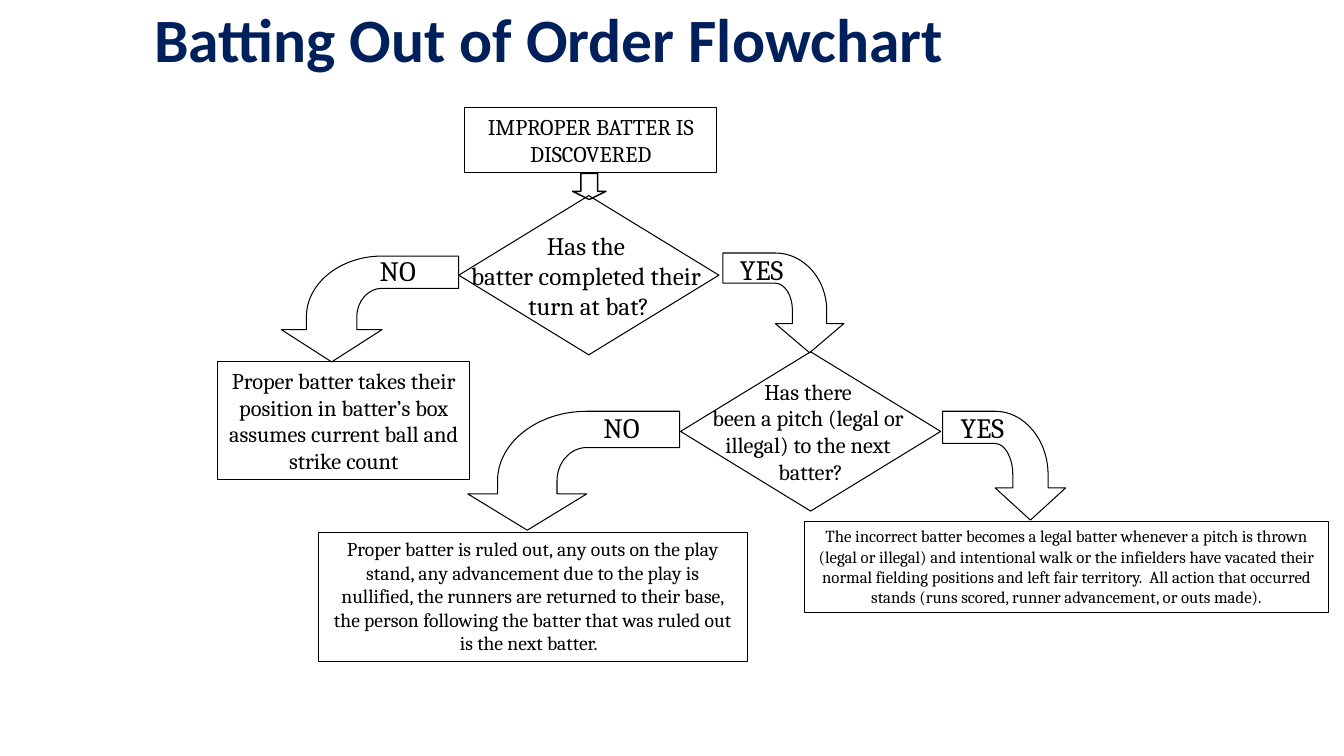
from dataclasses import dataclass
from pptx import Presentation
from pptx.dml.color import RGBColor
from pptx.enum.shapes import MSO_SHAPE
from pptx.enum.text import MSO_ANCHOR, MSO_AUTO_SIZE, PP_ALIGN
from pptx.oxml.ns import qn
from pptx.oxml.xmlchemy import OxmlElement
from pptx.util import Inches, Pt


@dataclass(frozen=True)
class Theme:
    navy: RGBColor = RGBColor(0x00, 0x20, 0x5B)
    black: RGBColor = RGBColor(0, 0, 0)
    white: RGBColor = RGBColor(255, 255, 255)
    head: str = "Calibri"
    body: str = "Cambria"
    title: int = 44
    label: int = 20
    large: int = 18
    mid: int = 16
    small: int = 14
    tiny: int = 12
    line: float = 0.75
    bold: float = 1


THEME = Theme()


def paint(shape, width=THEME.line, fill=None):
    shape.shadow.inherit = False
    if fill is None:
        shape.fill.background()
    else:
        shape.fill.solid()
        shape.fill.fore_color.rgb = fill
    shape.line.color.rgb = THEME.black
    shape.line.width = Pt(width)


def write(shape, text, size, anchor=MSO_ANCHOR.TOP, wrap=True, grow=True):
    frame = shape.text_frame
    frame.text = text
    frame.word_wrap = wrap
    frame.vertical_anchor = anchor
    if grow:
        frame.auto_size = MSO_AUTO_SIZE.SHAPE_TO_FIT_TEXT
    for para in frame.paragraphs:
        para.alignment = PP_ALIGN.CENTER
        for run in para.runs:
            run.font.name = THEME.body
            run.font.size = Pt(size)
            run.font.color.rgb = THEME.black


def add_title(slide, text):
    box = slide.shapes.add_textbox(Inches(1.43), Inches(0.07), Inches(11.5), Inches(1.45))
    frame = box.text_frame
    frame.word_wrap = True
    frame.margin_top = Inches(0.02)
    frame.text = text
    para = frame.paragraphs[0]
    para.line_spacing = 0.9
    font = para.runs[0].font
    font.name = THEME.head
    font.size = Pt(THEME.title)
    font.bold = True
    font.color.rgb = THEME.navy


def add_box(slide, place, text, size, fill=None):
    box = slide.shapes.add_shape(MSO_SHAPE.RECTANGLE, *map(Inches, place))
    paint(box, fill=fill)
    write(box, text, size)


def add_choice(slide, left, top, text, size):
    choice = slide.shapes.add_shape(
        MSO_SHAPE.FLOWCHART_DECISION, Inches(left), Inches(top), Inches(2.58), Inches(1.58))
    paint(choice)
    write(choice, text, size, MSO_ANCHOR.MIDDLE, wrap=False, grow=False)


def add_drop(slide):
    drop = slide.shapes.add_shape(
        MSO_SHAPE.DOWN_ARROW, Inches(5.68), Inches(1.72), Inches(0.33), Inches(0.26))
    drop.adjustments[0] = 0.5
    drop.adjustments[1] = 0.312
    paint(drop, THEME.bold)


def bend(start, end):
    (left, low), (right, high) = start, end
    return [start, (left, low + 0.55 * (high - low)),
            (right - 0.55 * (right - left), high), end]


def round_off(shape, starts):
    lines = list(shape.element.iter(qn("a:lnTo")))
    for start in starts:
        arc = OxmlElement("a:cubicBezTo")
        lines[start].addprevious(arc)
        for line in lines[start:start + 3]:
            arc.append(line[0])
            line.getparent().remove(line)


def add_branch(slide, tip, tail, half, neck, top, base, label, place, fill=None):
    tip_x, tip_y = tip
    side = 1 if tail > tip_x else -1
    reach, shaft = side * half, side * half / 2
    turn_x, turn_y = tip_x + reach, neck - 0.13
    outer = bend((tip_x - shaft, turn_y), (turn_x, top))
    inner = bend((tip_x + shaft, turn_y), (turn_x, base))
    points = [
        (tip_x - reach, neck), (tip_x - shaft, neck), *outer,
        (tail, top), (tail, base), *reversed(inner),
        (tip_x + shaft, neck), (tip_x + reach, neck), tip,
    ]
    group = slide.shapes.add_group_shape()
    pen = group.shapes.build_freeform(Inches(tip_x), Inches(tip_y))
    pen.add_line_segments([(Inches(x), Inches(y)) for x, y in points], close=True)
    arrow = pen.convert_to_shape()
    round_off(arrow, (3, 9))
    paint(arrow, fill=fill)
    box = group.shapes.add_textbox(*map(Inches, place))
    write(box, label, THEME.label, wrap=False)


def main():
    deck = Presentation()
    deck.slide_width, deck.slide_height = Inches(13.33), Inches(7.5)
    slide = deck.slides.add_slide(deck.slide_layouts[6])

    add_title(slide, "Batting Out of Order Flowchart")
    add_box(slide, (4.61, 1.07, 2.5, 0.64), "IMPROPER BATTER IS DISCOVERED",
            THEME.mid, THEME.white)
    add_choice(slide, 4.55, 1.94, "Has the \nbatter completed their \nturn at bat?", THEME.large)
    add_drop(slide)
    add_box(slide, (2.16, 3.59, 2.5, 1.17),
            "Proper batter takes their position in batter’s box "
            "assumes current ball and strike count", THEME.mid)
    add_branch(slide, (3.29, 3.59), 4.55, 0.5, 3.27, 2.54, 2.86,
               "NO", (3.64, 2.47, 0.61, 0.44), THEME.white)
    add_box(slide, (3.16, 5.28, 4.25, 1.28),
            "Proper batter is ruled out, any outs on the play stand, any advancement "
            "due to the play is nullified, the runners are returned to their base, the "
            "person following the batter that was ruled out is the next batter.  ", THEME.small)
    add_box(slide, (7.98, 5.17, 5.2, 0.91),
            "The incorrect batter becomes a legal batter whenever a pitch is thrown "
            "(legal or illegal) and intentional walk or the infielders have vacated their "
            "normal fielding positions and left fair territory.  All action that occurred "
            "stands (runs scored, runner advancement, or outs made).", THEME.tiny)
    add_choice(slide, 6.75, 3.49,
               "Has there \nbeen a pitch (legal or \nillegal) to the next \nbatter?", THEME.mid)
    add_branch(slide, (5.23, 5.26), 6.74, 0.59, 4.9, 4.08, 4.44,
               "NO", (5.86, 4.02, 0.61, 0.44))
    add_branch(slide, (8.03, 3.5), 7.17, 0.34, 3.21, 2.51, 2.81,
               "YES", (7.19, 2.46, 0.73, 0.41))
    add_branch(slide, (10.22, 5.16), 9.35, 0.35, 4.84, 4.08, 4.4,
               "YES", (9.38, 4.02, 0.73, 0.42))

    deck.save("out.pptx")


if __name__ == "__main__":
    main()
